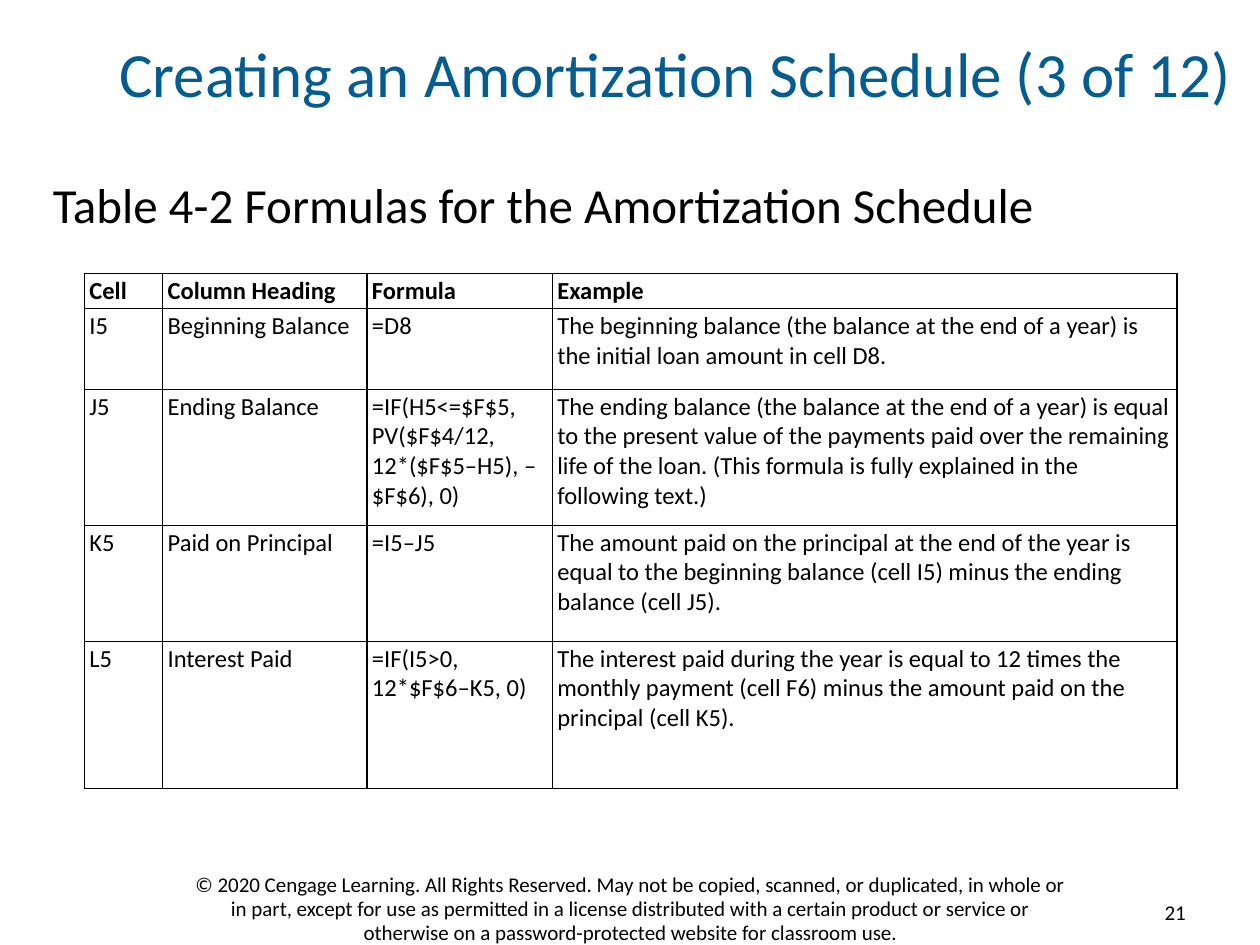
from lxml import etree
from pptx import Presentation
from pptx.dml.color import RGBColor
from pptx.enum.text import MSO_ANCHOR, PP_ALIGN
from pptx.oxml.ns import qn
from pptx.util import Inches, Pt

LEFT, CENTER, RIGHT = PP_ALIGN.LEFT, PP_ALIGN.CENTER, PP_ALIGN.RIGHT
TOP, MIDDLE, BOTTOM = MSO_ANCHOR.TOP, MSO_ANCHOR.MIDDLE, MSO_ANCHOR.BOTTOM

BLACK = RGBColor(0x00, 0x00, 0x00)
TITLE_BLUE = RGBColor(0x05, 0x5C, 0x91)
FONT = "Calibri"

COLUMN_WIDTHS = [0.62, 1.62, 1.47, 4.95]
ROW_HEIGHTS = [0.28, 0.64, 1.08, 0.92, 1.17]
FORMULA_ROWS = [
    ["Cell", "Column Heading", "Formula", "Example"],
    ["I5", "Beginning Balance", "=D8",
     "The beginning balance (the balance at the end of a year) is the initial "
     "loan amount in cell D8."],
    ["J5", "Ending Balance",
     "=IF(H5<=$F$5, PV($F$4/12, 12*($F$5–H5), –$F$6), 0)",
     "The ending balance (the balance at the end of a year) is equal to the "
     "present value of the payments paid over the remaining life of the loan. "
     "(This formula is fully explained in the following text.)"],
    ["K5", "Paid on Principal", "=I5–J5",
     "The amount paid on the principal at the end of the year is equal to the "
     "beginning balance (cell I5) minus the ending balance (cell J5)."],
    ["L5", "Interest Paid", "=IF(I5>0, 12*$F$6–K5, 0)",
     "The interest paid during the year is equal to 12 times the monthly "
     "payment (cell F6) minus the amount paid on the principal (cell K5)."],
]
COPYRIGHT = (
    "© 2020 Cengage Learning. All Rights Reserved. May not be copied, scanned, "
    "or duplicated, in whole or in part, except for use as permitted in a "
    "license distributed with a certain product or service or otherwise on a "
    "password-protected website for classroom use."
)


def set_margins(target, horizontal, vertical):
    target.margin_left = target.margin_right = Inches(horizontal)
    target.margin_top = target.margin_bottom = Inches(vertical)


def write(frame, text, size, align=LEFT, color=BLACK, bold=False, spacing=None):
    frame.text = text
    para = frame.paragraphs[0]
    para.alignment = align
    para.line_spacing = spacing
    para.font.name = FONT
    para.font.size = Pt(size)
    para.font.bold = bold
    para.font.color.rgb = color


def add_title(page, left, top, width, height):
    title = page.shapes.title
    title.left, title.top = Inches(left), Inches(top)
    title.width, title.height = Inches(width), Inches(height)
    frame = title.text_frame
    frame.word_wrap = True
    frame.vertical_anchor = MIDDLE
    set_margins(frame, 0, 0)
    write(frame, "Creating an Amortization Schedule (3 of 12)", 36,
          CENTER, TITLE_BLUE, spacing=0.85)


def add_text_box(page, left, top, width, height, wrap=True, anchor=TOP):
    box = page.shapes.add_textbox(
        Inches(left), Inches(top), Inches(width), Inches(height))
    frame = box.text_frame
    frame.word_wrap = wrap
    frame.vertical_anchor = anchor
    return frame


def add_caption(page, left, top, width, height):
    frame = add_text_box(page, left, top, width, height)
    set_margins(frame, 0, 0)
    write(frame, "Table 4-2 Formulas for the Amortization Schedule", 28,
          spacing=0.95)


def add_copyright(page, left, top, width, height):
    frame = add_text_box(page, left, top, width, height)
    write(frame, COPYRIGHT, 12, CENTER, spacing=0.95)


def add_page_number(page, left, top, width, height):
    frame = add_text_box(page, left, top, width, height, False, MIDDLE)
    write(frame, "21", 12, RIGHT)


def add_borders(cell):
    properties = cell._tc.get_or_add_tcPr()
    for side in ("a:lnL", "a:lnR", "a:lnT", "a:lnB"):
        line = etree.SubElement(properties, qn(side), w=str(Pt(1)))
        fill = etree.SubElement(line, qn("a:solidFill"))
        etree.SubElement(fill, qn("a:srgbClr"), val=str(BLACK))


def add_formula_table(page, left, top, width, height):
    table = page.shapes.add_table(
        len(ROW_HEIGHTS), len(COLUMN_WIDTHS),
        Inches(left), Inches(top), Inches(width), Inches(height)).table
    table.horz_banding = False
    for column, share in zip(table.columns, COLUMN_WIDTHS):
        column.width = Inches(width * share / sum(COLUMN_WIDTHS))
    for row, share in zip(table.rows, ROW_HEIGHTS):
        row.height = Inches(height * share / sum(ROW_HEIGHTS))
    for row_index, texts in enumerate(FORMULA_ROWS):
        is_header = row_index == 0
        for column_index, text in enumerate(texts):
            cell = table.cell(row_index, column_index)
            set_margins(cell, 0.04, 0.02)
            cell.vertical_anchor = BOTTOM if is_header else TOP
            add_borders(cell)
            cell.fill.background()
            write(cell.text_frame, text, 14, bold=is_header)


def main():
    deck = Presentation()
    deck.slide_width, deck.slide_height = Inches(10), Inches(7.5)
    page = deck.slides.add_slide(deck.slide_layouts.get_by_name("Title Only"))
    add_title(page, 0.83, 0.36, 9.06, 0.52)
    add_caption(page, 0.42, 1.42, 8.08, 0.45)
    add_formula_table(page, 0.67, 2.17, 8.67, 4.09)
    add_copyright(page, 1.42, 6.88, 7.17, 0.6)
    add_page_number(page, 9.1, 7.09, 0.41, 0.3)
    deck.save("out.pptx")


if __name__ == "__main__":
    main()
